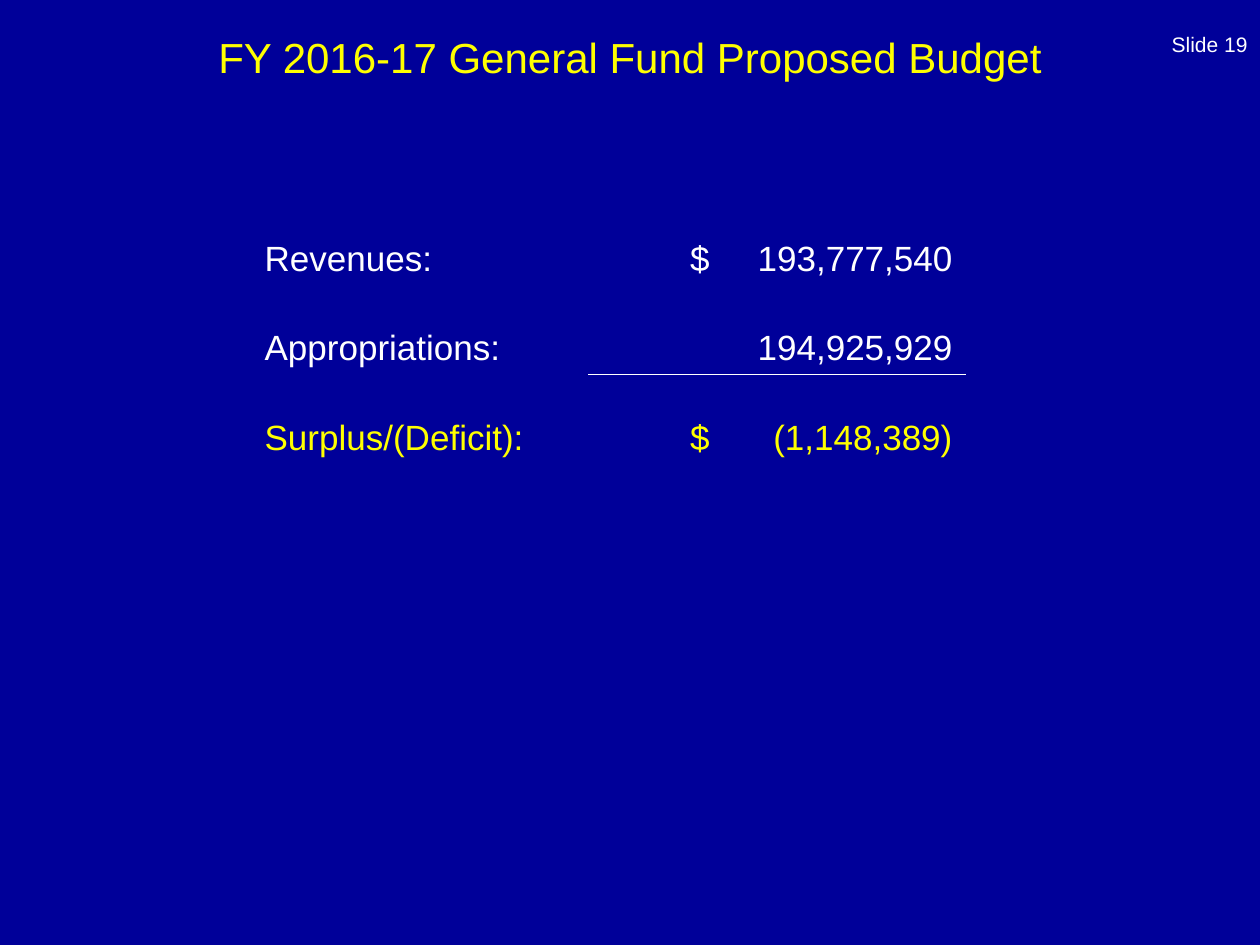
from lxml import etree
from pptx import Presentation
from pptx.dml.color import RGBColor
from pptx.enum.text import MSO_ANCHOR, PP_ALIGN
from pptx.oxml.ns import qn
from pptx.util import Cm, Pt

TOP, BOTTOM = MSO_ANCHOR.TOP, MSO_ANCHOR.BOTTOM
LEFT, CENTER, RIGHT = PP_ALIGN.LEFT, PP_ALIGN.CENTER, PP_ALIGN.RIGHT
NAVY, WHITE, YELLOW = "000099", "FFFFFF", "FFFF00"
PLAIN = "{2D5ABB26-0587-4C30-8999-92F81FD0307C}"  # no style, no grid

TITLE = "FY 2016-17 General Fund Proposed Budget"
LABEL = "Slide 19"
ROWS = [  # label, sign, amount, colour
    ("Revenues:", "$", "193,777,540", WHITE),
    ("Appropriations:", "", "194,925,929", WHITE),
    ("Surplus/(Deficit):", "$", "(1,148,389)", YELLOW),
]
COLS = [6.78, 7.62]
HIGHS = [1.04, 1.8, 1.8]
TABS = [(1.8, "l"), (7.09, "r")]  # sign, right edge of amount


def style(para, text, size, color, align=LEFT):
    para.text = text
    para.alignment = align
    font = para.font
    font.name, font.size = "Arial", Pt(size)
    font.color.rgb = RGBColor.from_string(color)


def add_tabs(para):
    stops = etree.SubElement(para._p.get_or_add_pPr(), qn("a:tabLst"))
    for pos, kind in TABS:
        etree.SubElement(stops, qn("a:tab"), pos=str(Cm(pos)), algn=kind)


def add_edge(cell, side):
    """Draw a white 1 pt border on one side of a cell."""
    line = etree.Element(qn(f"a:{side}"), w=str(Pt(1)))
    fill = etree.SubElement(line, qn("a:solidFill"))
    etree.SubElement(fill, qn("a:srgbClr"), val=WHITE)
    cell._tc.get_or_add_tcPr().insert(0, line)


def add_budget(slide):
    frame = slide.shapes.add_table(
        len(ROWS), len(COLS), Cm(5.08), Cm(4.65), Cm(sum(COLS)), Cm(sum(HIGHS)))
    table = frame.table
    table.first_row = table.horz_banding = False
    next(frame._element.iter(qn("a:tableStyleId"))).text = PLAIN
    for col, wide in zip(table.columns, COLS):
        col.width = Cm(wide)
    for r, (name, sign, amount, color) in enumerate(ROWS):
        table.rows[r].height = Cm(HIGHS[r])
        for c, text in enumerate((name, f"\t{sign}\t{amount}")):
            cell = table.cell(r, c)
            cell.fill.background()
            cell.vertical_anchor = BOTTOM
            para = cell.text_frame.paragraphs[0]
            if c:
                add_tabs(para)
            style(para, text, 20, color)
    add_edge(table.cell(1, 1), "lnB")
    add_edge(table.cell(2, 1), "lnT")


def main():
    deck = Presentation()
    deck.slide_width, deck.slide_height = Cm(25.4), Cm(19.05)
    slide = deck.slides.add_slide(deck.slide_layouts[5])
    back = slide.background.fill
    back.solid()
    back.fore_color.rgb = RGBColor.from_string(NAVY)

    label = slide.shapes.add_textbox(Cm(19.48), 0, Cm(5.92), Cm(1.27))
    label.text_frame.word_wrap = True
    label.text_frame.vertical_anchor = BOTTOM
    style(label.text_frame.paragraphs[0], LABEL, 12, WHITE, RIGHT)

    add_budget(slide)

    title = slide.shapes.title
    title.left, title.top = Cm(0.85), Cm(0.64)
    title.width, title.height = Cm(23.7), Cm(1.7)
    title.text_frame.vertical_anchor = TOP
    title.text_frame.margin_top = 0
    style(title.text_frame.paragraphs[0], TITLE, 24, YELLOW, CENTER)

    deck.save("out.pptx")


if __name__ == "__main__":
    main()
